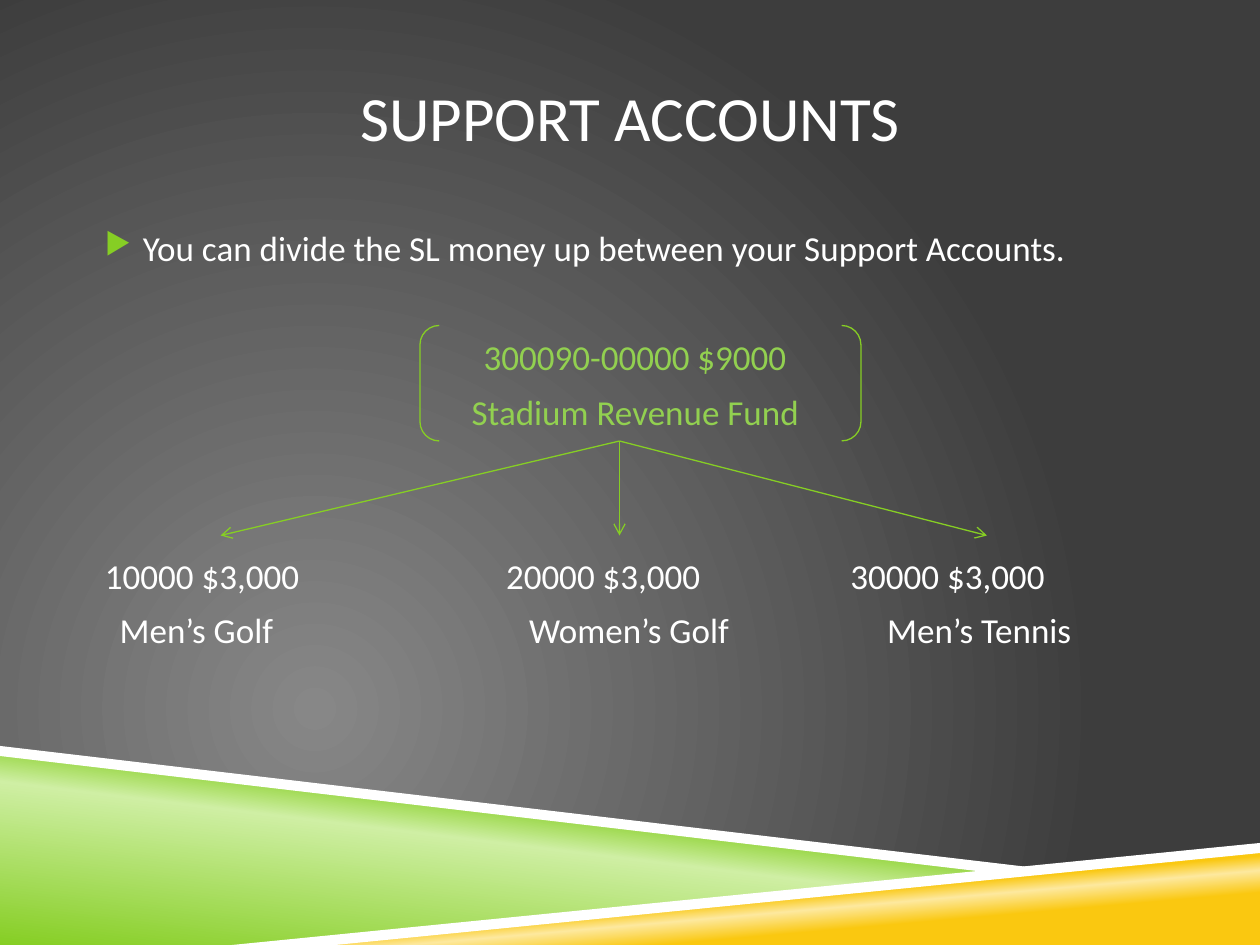
from lxml import etree
from pptx import Presentation
from pptx.dml.color import RGBColor
from pptx.enum.shapes import MSO_CONNECTOR, MSO_SHAPE
from pptx.enum.text import MSO_ANCHOR, PP_ALIGN
from pptx.oxml.ns import qn
from pptx.util import Inches, Pt

LINE, BRACKETS = MSO_CONNECTOR.STRAIGHT, MSO_SHAPE.DOUBLE_BRACKET
MIDDLE, TOP = MSO_ANCHOR.MIDDLE, MSO_ANCHOR.TOP
LEFT, CENTER = PP_ALIGN.LEFT, PP_ALIGN.CENTER
C = {"white": "FFFFFF", "green": "86CE24", "mint": "CFEFA4", "lime": "92D050",
     "gold": "FAC810", "cream": "FDE99F", "grey": "878787", "dark": "3D3D3D"}
COLS, ROWS = 120, 90

prs = Presentation()
prs.slide_width, prs.slide_height = Inches(10), Inches(7.5)
U = prs.slide_width / COLS
s = prs.slides.add_slide(prs.slide_layouts[6])


def add(parent, tag, **attrs):
    el = etree.SubElement(parent, qn(tag))
    for name, value in attrs.items():
        el.set(name, str(value))
    return el


def set_gradient(fill, owner, stops):
    fill.gradient()
    grad = next(owner.iter(qn("a:gradFill")))
    for child in list(grad):
        grad.remove(child)
    stop_list = add(grad, "a:gsLst")
    for pos, color in stops:
        add(add(stop_list, "a:gs", pos=pos * 1000), "a:srgbClr", val=C[color])
    return grad


grad = set_gradient(s.background.fill, s._element, [(0, "grey"), (100, "dark")])
add(add(grad, "a:path", path="circle"), "a:fillToRect", l=50000, t=100000, r=100000, b=50000)

bands = [
    ([(0, 71.64), (95.04, 83.04), (24, ROWS), (0, ROWS)],
     [(0, "green"), (52, "mint"), (66, "green")], 277),
    ([(23.76, ROWS), (COLS, 80.64), (COLS, ROWS)],
     [(28, "gold"), (40, "cream"), (48, "gold")], 265),
    ([(0, 71.04), (0, 72), (94.8, 83.16), (99.84, 82.8)], None, None),
    ([(COLS, 80.28), (22.08, ROWS), (31.92, ROWS), (COLS, 81.24)], None, None),
]
for points, stops, angle in bands:
    points = [(x * U, y * U) for x, y in points]
    outline = s.shapes.build_freeform(*points[0])
    outline.add_line_segments(points[1:])
    sp = outline.convert_to_shape()
    sp.shadow.inherit = False
    sp.line.fill.background()
    if stops:
        grad = set_gradient(sp.fill, sp._element.spPr, stops)
        add(grad, "a:lin", ang=angle * 60000, scaled=0)
    else:
        sp.fill.solid()
        sp.fill.fore_color.rgb = RGBColor.from_string(C["white"])

LINE_PT, GAP = 24.4, 7
title = [("SUPPORT ACCOUNTS", "white", CENTER, 0, [])]
body = [
    ("You can divide the SL money up between your Support Accounts.", "white", LEFT, 0, []),
    ("300090-00000 $9000", "lime", CENTER, 2 * GAP + LINE_PT, []),
    ("Stadium Revenue Fund", "lime", CENTER, GAP, []),
    ("10000 $3,000\t20000 $3,000\t30000 $3,000", "white", LEFT,
     3 * GAP + 2 * LINE_PT, [38.2, 71]),
    ("\tMen’s Golf\tWomen’s Golf\tMen’s Tennis", "white", LEFT, GAP, [1.4, 40.4, 74.5]),
]
for box, size, anchor, lines in [((9, 3.6, 102, 15), 36, MIDDLE, title),
                                 ((10, 21, 101, 49), 20, TOP, body)]:
    tf = s.shapes.add_textbox(*(round(v * U) for v in box)).text_frame
    tf.word_wrap, tf.vertical_anchor = True, anchor
    tf.margin_left = tf.margin_right = 0
    for i, (text, color, align, before, tabs) in enumerate(lines):
        p = tf.paragraphs[0] if i == 0 else tf.add_paragraph()
        p.alignment, p.space_before = align, Pt(before)
        pPr = p._p.get_or_add_pPr()
        if lines is body and i == 0:
            pPr.set("marL", str(Inches(0.3)))
            pPr.set("indent", str(-Inches(0.3)))
            add(add(pPr, "a:buClr"), "a:srgbClr", val=C["green"])
            add(pPr, "a:buSzPct", val=85000)
            add(pPr, "a:buChar", char="▶")
        if tabs:
            tab_list = add(pPr, "a:tabLst")
            for pos in tabs:
                add(tab_list, "a:tab", pos=round(pos * U), algn="l")
        r = p.add_run()
        r.text = text
        r.font.size, r.font.name = Pt(size), "Calibri"
        r.font.color.rgb = RGBColor.from_string(C[color])

sp = s.shapes.add_shape(BRACKETS, *(round(v * U) for v in (40, 31, 42, 11)))
sp.shadow.inherit = False
sp.fill.background()
sp.line.color.rgb = RGBColor.from_string(C["green"])
sp.line.width = Pt(0.75)

for col in (21, 94, 59):
    arrow = s.shapes.add_connector(LINE, *(round(v * U) for v in (59, 42, col, 51)))
    arrow.line.color.rgb = RGBColor.from_string(C["green"])
    arrow.line.width = Pt(0.75)
    add(arrow.line._get_or_add_ln(), "a:tailEnd", type="arrow")
    add(arrow._element.spPr, "a:effectLst")

prs.save("out.pptx")
